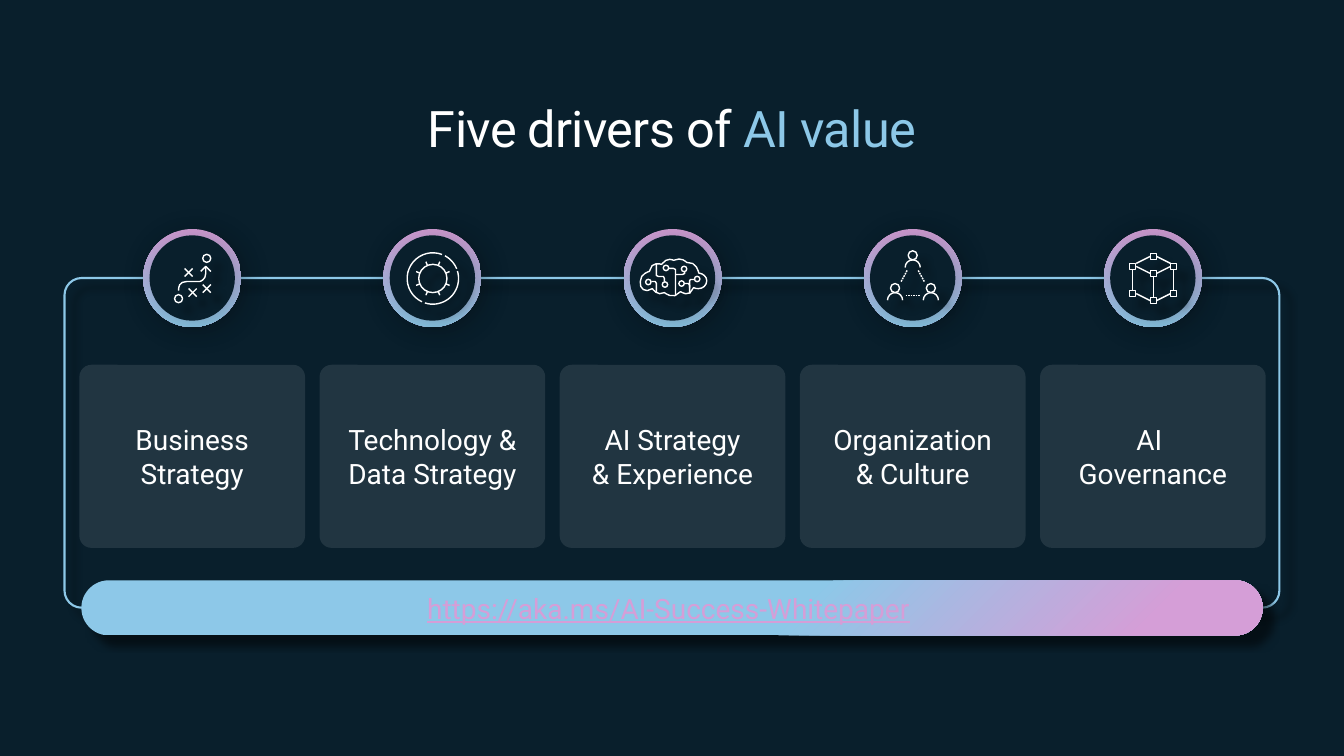
import math

import pptx
import pptx.dml.color
import pptx.enum.shapes
import pptx.enum.text
import pptx.oxml
import pptx.oxml.ns
import pptx.util
from lxml import etree

Pt = pptx.util.Pt
SHAPES = pptx.enum.shapes.MSO_SHAPE
ANCHOR = pptx.enum.text.MSO_ANCHOR
COLOURS = {"night": "091F2C", "card": "213541", "white": "FFFFFF", "sky": "8DC8E8",
           "pink": "D59ED7", "orchid": "CD9AD0", "black": "000000"}
HARD_SHADOW = (50, 5, 10, 45)
SOFT_SHADOW = (20, 20, 4, 45)
UNIT = 0.72
DRIVERS = [("Business", "Strategy"), ("Technology & Data Strategy",), ("AI Strategy", "& Experience"),
           ("Organization", "& Culture"), ("AI ", "Governance")]


def rgb(name):
    """Return the named colour."""
    return pptx.dml.color.RGBColor.from_string(COLOURS[name])


def add_shadow(shape, alpha, blur, distance, angle):
    """Give a shape an outer shadow."""
    shape.shadow.inherit = False
    effects = shape._element.spPr.find(pptx.oxml.ns.qn("a:effectLst"))
    outer = etree.SubElement(effects, pptx.oxml.ns.qn("a:outerShdw"), blurRad=str(Pt(blur)),
                             dist=str(Pt(distance)), dir=str(angle * 60000), algn="tl", rotWithShape="0")
    colour = etree.SubElement(outer, pptx.oxml.ns.qn("a:srgbClr"), val=COLOURS["black"])
    etree.SubElement(colour, pptx.oxml.ns.qn("a:alpha"), val=str(alpha * 1000))


def add_panel(slide, kind, box, fill=None, line=None, shadow=None, radius=None):
    """Add a preset shape with a plain fill, line and shadow."""
    shape = slide.shapes.add_shape(kind, *map(Pt, box))
    if radius is not None:
        shape.adjustments[0] = radius
    if fill:
        shape.fill.solid()
        shape.fill.fore_color.rgb = rgb(fill)
    else:
        shape.fill.background()
    if line:
        shape.line.color.rgb = rgb(line)
        shape.line.width = Pt(1.5)
    else:
        shape.line.fill.background()
    shape.shadow.inherit = False
    if shadow:
        add_shadow(shape, *shadow)
    return shape


def set_gradient(shape, *stops):
    """Fill a shape with a two-colour gradient."""
    shape.fill.gradient()
    for stop, (position, colour) in zip(shape.fill.gradient_stops, stops):
        stop.position = position
        stop.color.rgb = rgb(colour)


def add_run(paragraph, text, colour, **formats):
    """Add a formatted run to a centred paragraph."""
    paragraph.alignment = pptx.enum.text.PP_ALIGN.CENTER
    run = paragraph.add_run()
    run.text = text
    for name, value in {"name": "Roboto", "size": Pt(20), "bold": False, **formats}.items():
        setattr(run.font, name, value)
    run.font.color.rgb = rgb(colour)
    return run


def set_frame(frame, anchor, left, top):
    """Set wrapping, anchor and symmetric margins of a text frame."""
    formats = {"word_wrap": True, "vertical_anchor": anchor, "margin_left": Pt(left),
               "margin_right": Pt(left), "margin_top": Pt(top), "margin_bottom": Pt(top)}
    for name, value in formats.items():
        setattr(frame, name, value)


def arc(x, y, radius, start=0, end=360):
    """Return the points of an arc."""
    steps = 8 if radius < 8 else 20
    angles = [math.radians(start + (end - start) * step / steps) for step in range(steps + 1)]
    return [(x + radius * math.cos(angle), y + radius * math.sin(angle)) for angle in angles]


def curve(start, *segments):
    """Return the points of a chain of cubic curves."""
    points = [start]
    for segment in segments:
        knots = (points[-1], *segment)
        for step in range(1, 5):
            t = step / 4
            weights = ((1 - t) ** 3, 3 * t * (1 - t) ** 2, 3 * t * t * (1 - t), t ** 3)
            points.append(tuple(sum(w * knot[axis] for w, knot in zip(weights, knots)) for axis in (0, 1)))
    return points


def dashes(start, end, count):
    """Split a line into equal dashes with half-length gaps."""
    def point(t):
        return tuple(a + (b - a) * t for a, b in zip(start, end))
    length = 1 / (1.5 * count - 0.5)
    return [[point(1.5 * i * length), point((1.5 * i + 1) * length)] for i in range(count)]


def route_icon():
    """Return the strokes of a game plan."""
    route = [(13.5, -11.5), *curve((13.5, -4.5), ((13.5, 2), (7.5, 3.5), (7.5, 3.5))),
             *curve((-5.5, 3.5), ((-13, 3.5), (-13.5, 9), (-13.5, 12.5)))]
    strokes = [route, [(18.5, -6.5), (13.5, -11.5), (8.5, -6.5)], arc(-13.5, 20.5, 4), arc(14.5, -19.5, 4)]
    for x, y in [(-3.5, -5.5), (14.5, 10.5), (0.5, 14.5)]:
        strokes += [[(x - 4, y - 4), (x + 4, y + 4)], [(x + 4, y - 4), (x - 4, y + 4)]]
    return strokes


def dial_icon():
    """Return the strokes of a ticked dial."""
    strokes = [arc(0.5, 0.5, 14)]
    strokes += [arc(0.5, 0.5, 25.5, *span) for span in [(-69, -245), (108, -17), (-22, -62)]]
    for tick in range(8):
        angle = math.radians(22.5 + 45 * tick)
        strokes.append([(0.5 + r * math.cos(angle), 0.5 + r * math.sin(angle)) for r in (14, 18)])
    return strokes


def brain_icon():
    """Return the strokes of a circuit brain."""
    outline = curve(
        (21, 9.5), ((23, 10.5), (24, 10.5), (26, 10.5)), ((30, 10.5), (34, 7.5), (34, 2.5)),
        ((34, -1.5), (30, -4.5), (26, -5)), ((26, -5.5), (24, -16.5), (14, -15.5)),
        ((14, -15.5), (9, -21.5), (1, -17.5)), ((1, -17.5), (-5, -21.5), (-11, -13.5)),
        ((-11, -13.5), (-21, -17.5), (-23, -6.5)), ((-23, -6.5), (-32, -4.5), (-32, 3.5)),
        ((-33, 10.5), (-27, 15.5), (-20, 10.5)), ((-20, 10.5), (-15, 18.5), (-8, 14.5)),
        ((-8, 14.5), (1, 22.5), (8, 13.5)), ((8, 13.5), (17, 20.5), (21, 9.5)))
    nodes = [(24.5, 1), (9, 5.5), (-6.5, -10), (11.5, -9), (-7.5, 6.5), (-24, 4)]
    return [outline, *[arc(x, y, 2.7) for x, y in nodes],
            [(-16, 14.5), (-16, 5.5), (-17, 3.5), (-21, 3.5)],
            [(3, 17.5), (3, -8.5), (1, -9.5), (-4, -9.5)],
            [(3, -3.5), (10, -3.5), (12, -4.5), (12, -6.5)],
            [(-16, -14.5), (-16, -2.5), (-14, -1.5), (-9, -1.5), (-8, 0.5), (-8, 3.5)],
            [(22, 1.5), (18, 1.5), (17, 2.5), (17, 9.5)],
            [(17, 15.5), (17, 7.5), (16, 5.5), (12, 5.5)]]


def people_icon():
    """Return the strokes of three linked people."""
    strokes = dashes((-7, 17.5), (7, 17.5), 6)
    for side in (-1, 1):
        strokes += dashes((5.5 * side, -7.5), (11.5 * side, 3.5), 5)
    for x, y in [(0, -22.5), (18, 10), (-17.5, 10)]:
        strokes += [arc(x, y, 4.5), arc(x, y + 12, 7.5, 180, 360)]
    return strokes


def cube_icon():
    """Return the strokes of a cube with square corners."""
    strokes = [[(x, top), (x, top + 21)] for x, top in [(0.5, -1.5), (20.5, -8.5), (-20, -8.5)]]
    for x, y in [(0.5, -21.5), (0.5, -4.5), (0.5, 22.5), *[(x, y) for x in (-20, 20.5) for y in (-11.5, 15.5)]]:
        strokes.append([(x + 3 * a, y + 3 * b) for a, b in [(1, 1), (-1, 1), (-1, -1), (1, -1), (1, 1)]])
    for side in (-1, 1):
        for near, far in [(-21.5, -14.5), (-4.5, -11.5), (22.5, 15.5)]:
            strokes.append([(0.5 + 3 * side, near), (0.5 + 17 * side, far)])
    return strokes


def add_icon(slide, x, y, strokes):
    """Draw the strokes of one icon around a centre."""
    placed = [[(Pt(x + UNIT * a), Pt(y + UNIT * b)) for a, b in stroke] for stroke in strokes]
    builder = slide.shapes.build_freeform(*placed[0][0])
    for number, (first, *rest) in enumerate(placed):
        if number:
            builder.move_to(*first)
        builder.add_line_segments(rest, close=False)
    icon = builder.convert_to_shape()
    icon.fill.background()
    icon.line.color.rgb = rgb("white")
    icon.line.width = Pt(1)
    add_shadow(icon, *HARD_SHADOW)


def add_title(slide, box):
    """Place the two-colour title."""
    title = slide.shapes.title
    for name, value in zip(("left", "top", "width", "height"), box):
        setattr(title, name, Pt(value))
    set_frame(title.text_frame, ANCHOR.TOP, 0, 0)
    for text, colour in [("Five drivers of ", "white"), ("AI value", "sky")]:
        run = add_run(title.text_frame.paragraphs[0], text, colour, size=Pt(36))
        run._r.get_or_add_rPr().set("spc", "-50")


def add_driver(slide, box, badge_y, lines, strokes):
    """Add one card with its round badge and icon."""
    left, _, width, _ = box
    x = left + width / 2
    for diameter, fill in [(70, "sky"), (61, "night")]:
        badge_box = (x - diameter / 2, badge_y - diameter / 2, diameter, diameter)
        badge = add_panel(slide, SHAPES.OVAL, badge_box, fill, shadow=SOFT_SHADOW)
        if fill == "sky":
            set_gradient(badge, (0, "orchid"), (1, "sky"))
            badge.fill.gradient_angle = 270
    add_icon(slide, x, badge_y, strokes)
    card = add_panel(slide, SHAPES.ROUNDED_RECTANGLE, box, "card", radius=0.066)
    set_frame(card.text_frame, ANCHOR.MIDDLE, 7.2, 21.6)
    paragraph = card.text_frame.paragraphs[0]
    for number, line in enumerate(lines):
        if number:
            paragraph.add_line_break()
        add_run(paragraph, line, "white")


def add_banner(slide, box):
    """Add the gradient bar with the web address."""
    banner = add_panel(slide, SHAPES.ROUNDED_RECTANGLE, box, "sky", shadow=HARD_SHADOW, radius=0.5)
    set_gradient(banner, (0.1, "pink"), (0.4, "sky"))
    gradient = banner._element.spPr.find(pptx.oxml.ns.qn("a:gradFill"))
    gradient.remove(gradient.find(pptx.oxml.ns.qn("a:lin")))
    circle = etree.SubElement(gradient, pptx.oxml.ns.qn("a:path"), path="circle")
    etree.SubElement(circle, pptx.oxml.ns.qn("a:fillToRect"), l="100000", t="100000")
    set_frame(banner.text_frame, ANCHOR.MIDDLE, 7.2, 3.6)
    banner.text_frame.margin_right = Pt(12)
    add_run(banner.text_frame.paragraphs[0], "https://aka.ms/AI-Success-Whitepaper", "pink", underline=True)


def add_drivers(slide, box):
    """Add the frame, the row of drivers and the banner."""
    left, top, width, height = box
    add_panel(slide, SHAPES.ROUNDED_RECTANGLE, box, line="sky", shadow=HARD_SHADOW, radius=0.052)
    icons = [route_icon, dial_icon, brain_icon, people_icon, cube_icon]
    for column, (lines, icon) in enumerate(zip(DRIVERS, icons)):
        card_box = (left + 10.6 + 171.55 * column, top + 62, 161.2, 130.8)
        add_driver(slide, card_box, top, lines, icon())
    add_banner(slide, (left + 12, top + height - 19.6, width - 24, 39.4))


def main():
    """Build and save the presentation."""
    presentation = pptx.Presentation()
    presentation.slide_width, presentation.slide_height = Pt(960), Pt(540)
    slide = presentation.slides.add_slide(presentation.slide_layouts[5])
    slide.background.fill.solid()
    slide.background.fill.fore_color.rgb = rgb("night")
    add_title(slide, (46.1, 69.1, 867.8, 44))
    add_drivers(slide, (46.1, 198.6, 867.8, 235.5))
    presentation.save("out.pptx")


if __name__ == "__main__":
    main()
